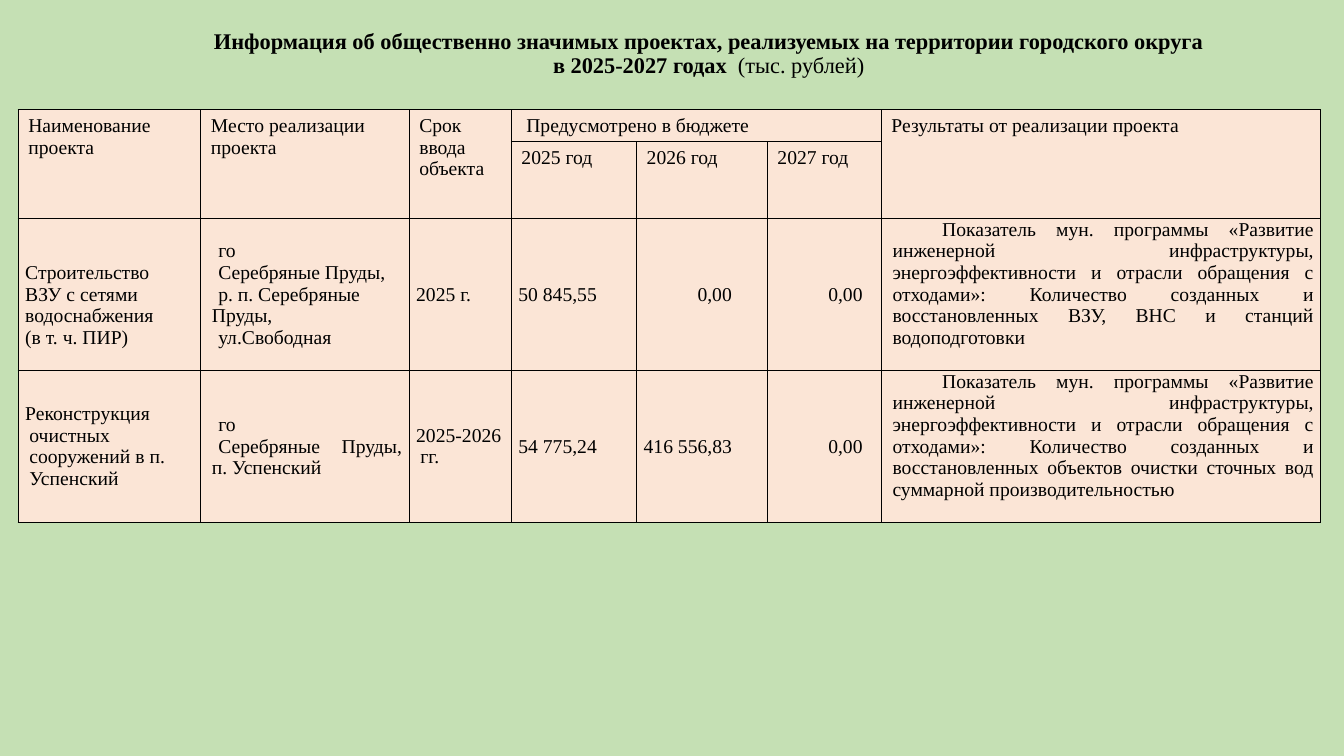
from pptx import Presentation
from pptx import util as u
from pptx.dml.color import RGBColor as Rgb
from pptx.enum import text as t
from pptx.oxml import parse_xml
from pptx.oxml.ns import nsdecls

Pt = u.Pt
THEME = {"page": "C5E0B4", "cell": "FBE5D6", "ink": "000000",
         "font": "Times New Roman", "title": 16, "body": 14, "line": 1}

TITLE = [("Информация об общественно значимых проектах, реализуемых "
          "на территории городского округа\vв 2025-2027 годах", True),
         ("  (тыс. рублей)", False)]

# Header: text, row, column, rows spanned, columns spanned, indent
HEADS = [("Наименование проекта", 0, 0, 2, 1, 0),
         ("Место реализации проекта", 0, 1, 2, 1, 0),
         ("Срок ввода объекта", 0, 2, 2, 1, 0),
         ("Предусмотрено в бюджете", 0, 3, 1, 3, 3.5),
         ("Результаты от реализации проекта", 0, 6, 2, 1, 0),
         ("2025 год", 1, 3, 1, 1, 0),
         ("2026 год", 1, 4, 1, 1, 0),
         ("2027 год", 1, 5, 1, 1, 0)]

# Paragraph styles: alignment, left margin, first-line indent
LEFT, JUST = t.PP_ALIGN.LEFT, t.PP_ALIGN.JUSTIFY
STYLES = {"plain": (LEFT, 0, 0), "hang": (LEFT, 3, -3),
          "place": (JUST, 3, 4.5), "street": (LEFT, 3, 4.5),
          "deep": (JUST, 3, 35.5)}

GOAL = ("Показатель мун. программы «Развитие инженерной инфраструктуры, "
        "энергоэффективности и отрасли обращения с отходами»: "
        "Количество созданных и восстановленных ")
ZERO = [("0,00", "deep")]

ROWS = [
    [[("Строительство ВЗУ c сетями водоснабжения", "plain"),
      ("(в т. ч. ПИР)", "plain")],
     [("го", "place"), ("Серебряные Пруды,", "place"),
      ("р. п. Серебряные Пруды,", "street"), ("ул.Свободная", "place")],
     [("2025 г.", "plain")], [("50 845,55", "plain")], ZERO, ZERO,
     [(GOAL + "ВЗУ, ВНС и станций водоподготовки", "deep")]],
    [[("Реконструкция очистных сооружений в п. Успенский", "hang")],
     [("го", "place"), ("Серебряные Пруды, п. Успенский", "place")],
     [("2025-2026 гг.", "hang")], [("54 775,24", "hang")],
     [("416 556,83", "hang")], ZERO,
     [(GOAL + "объектов очистки сточных вод суммарной "
       "производительностью", "deep")]],
]

WIDTHS = [130.4, 148.9, 73, 89.5, 93.4, 81.4, 314]
HEIGHTS = [22, 55, 108.5, 108]
LINE = 15.5
# Extra insets by body row and column: left, top, right, bottom
EXTRA = {(0, 0): (0, LINE, 6, 0),
         (0, 6): (0, 0, 0, LINE), (1, 6): (0, 0, 0, LINE)}


def add_run(para, words, size, bold=False):
    run = para.add_run()
    run.text = words
    font = run.font
    font.name, font.size, font.bold = THEME["font"], Pt(size), bold
    font.color.rgb = Rgb.from_string(THEME["ink"])


def write(cell, paras):
    frame = cell.text_frame
    for i, (words, style) in enumerate(paras):
        para = frame.add_paragraph() if i else frame.paragraphs[0]
        para.alignment, left, first = STYLES[style]
        props = para._p.get_or_add_pPr()
        props.set("marL", str(Pt(left)))
        props.set("indent", str(Pt(first)))
        add_run(para, words, THEME["body"])


def inset(cell, left, top, right, bottom):
    cell.margin_left, cell.margin_top = Pt(left), Pt(top)
    cell.margin_right, cell.margin_bottom = Pt(right), Pt(bottom)


def paint(cell):
    """Give a cell its four borders and its fill."""
    props = cell._tc.get_or_add_tcPr()
    for side in ("lnL", "lnR", "lnT", "lnB"):
        props.append(parse_xml(
            f'<a:{side} {nsdecls("a")} w="{Pt(THEME["line"])}"><a:solidFill>'
            f'<a:srgbClr val="{THEME["ink"]}"/></a:solidFill></a:{side}>'))
    cell.fill.solid()
    cell.fill.fore_color.rgb = Rgb.from_string(THEME["cell"])


def add_title(slide):
    box = slide.shapes.title
    box.left, box.top, box.width, box.height = map(Pt, (31, -39, 950.4, 173.5))
    frame = box.text_frame
    frame.auto_size = t.MSO_AUTO_SIZE.NONE
    frame.word_wrap = True
    frame.vertical_anchor = t.MSO_ANCHOR.MIDDLE
    frame.margin_bottom = Pt(21)
    para = frame.paragraphs[0]
    para.alignment, para.line_spacing = t.PP_ALIGN.CENTER, 0.9
    for words, bold in TITLE:
        for i, part in enumerate(words.split("\v")):
            if i:
                para.add_line_break()
            add_run(para, part, THEME["title"], bold)


def add_grid(slide):
    grid = slide.shapes.add_table(
        len(HEIGHTS), len(WIDTHS), Pt(13), Pt(78.5),
        Pt(sum(WIDTHS)), Pt(sum(HEIGHTS))).table
    grid.first_row = grid.horz_banding = False
    for col, width in zip(grid.columns, WIDTHS):
        col.width = Pt(width)
    for row, height in zip(grid.rows, HEIGHTS):
        row.height = Pt(height)
    for cell in grid.iter_cells():
        paint(cell)
    for words, row, col, down, across, shift in HEADS:
        cell = grid.cell(row, col)
        if down * across > 1:
            cell.merge(grid.cell(row + down - 1, col + across - 1))
        write(cell, [(words, "plain")])
        inset(cell, 7.2 + shift, 3.6, 7.2, 3.6)
    for r, row in enumerate(ROWS):
        for c, paras in enumerate(row):
            cell = grid.cell(r + 2, c)
            write(cell, paras)
            cell.vertical_anchor = t.MSO_ANCHOR.MIDDLE
            more = EXTRA.get((r, c), (0, 0, 0, 0))
            inset(cell, *(a + b for a, b in zip((5, 0, 5, 0), more)))


def main():
    deck = Presentation()
    deck.slide_width, deck.slide_height = Pt(960), Pt(540)
    slide = deck.slides.add_slide(deck.slide_layouts[5])
    back = slide.background.fill
    back.solid()
    back.fore_color.rgb = Rgb.from_string(THEME["page"])
    add_title(slide)
    add_grid(slide)
    deck.save("out.pptx")


if __name__ == "__main__":
    main()
